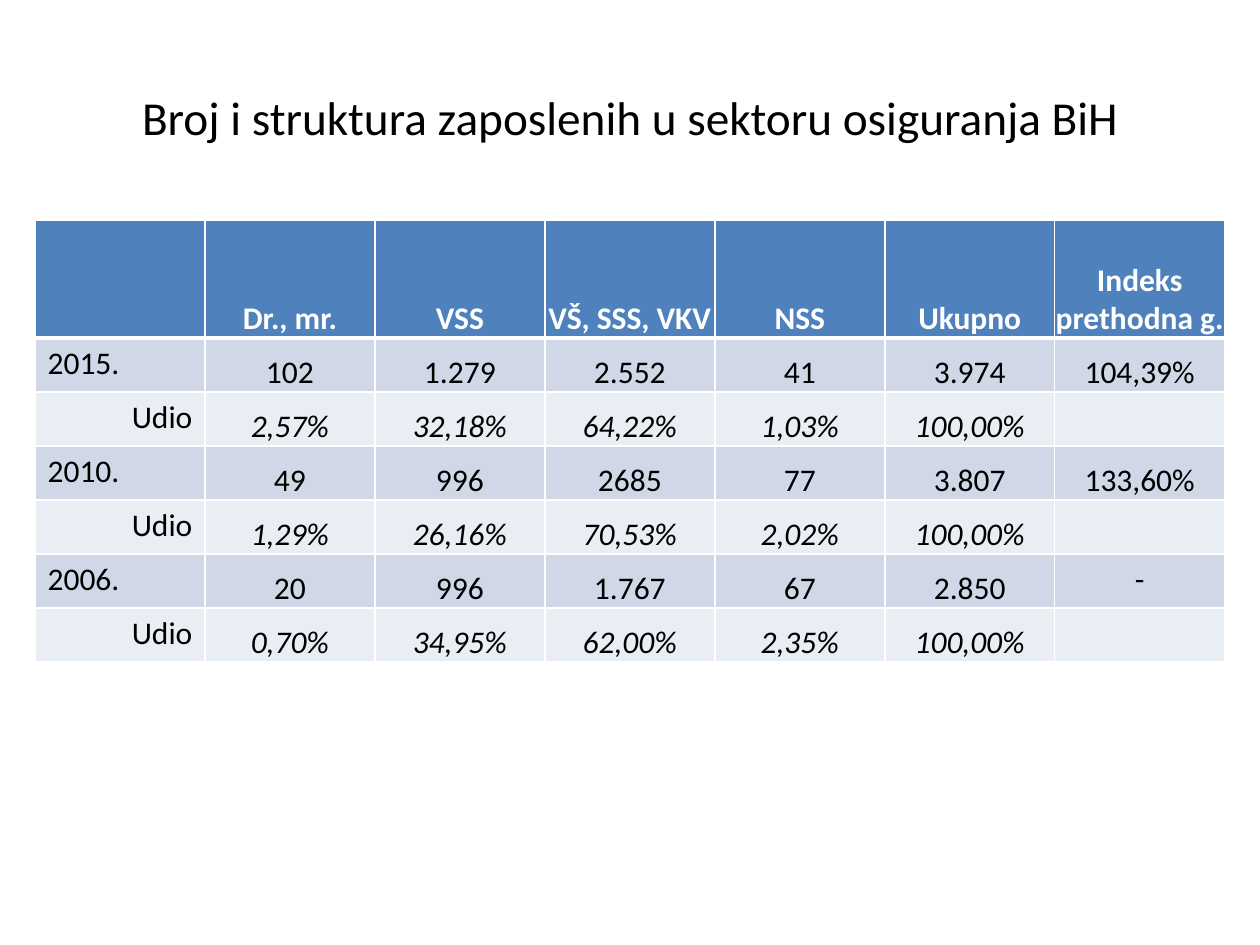
from lxml import etree
from pptx import Presentation
from pptx.dml.color import RGBColor
from pptx.enum.text import MSO_ANCHOR, PP_ALIGN
from pptx.oxml.ns import qn
from pptx.util import Emu, Pt

SCALE = 914400 / 126
FONT = "Calibri"
BLACK = RGBColor(0x00, 0x00, 0x00)
WHITE = RGBColor(0xFF, 0xFF, 0xFF)
HEADER_BLUE = RGBColor(0x4F, 0x81, 0xBD)
YEAR_BLUE = RGBColor(0xD0, 0xD8, 0xE8)
SHARE_BLUE = RGBColor(0xE9, 0xED, 0xF4)
LEFT, CENTER, RIGHT = PP_ALIGN.LEFT, PP_ALIGN.CENTER, PP_ALIGN.RIGHT
TOP, MIDDLE, BOTTOM = MSO_ANCHOR.TOP, MSO_ANCHOR.MIDDLE, MSO_ANCHOR.BOTTOM

TITLE = "Broj i struktura zaposlenih u sektoru osiguranja BiH"
ROWS = [
    ["", "Dr., mr.", "VSS", "VŠ, SSS, VKV", "NSS", "Ukupno", "Indeks prethodna g."],
    ["2015.", "102", "1.279", "2.552", "41", "3.974", "104,39%"],
    ["Udio", "2,57%", "32,18%", "64,22%", "1,03%", "100,00%", ""],
    ["2010.", "49", "996", "2685", "77", "3.807", "133,60%"],
    ["Udio", "1,29%", "26,16%", "70,53%", "2,02%", "100,00%", ""],
    ["2006.", "20", "996", "1.767", "67", "2.850", "-"],
    ["Udio", "0,70%", "34,95%", "62,00%", "2,35%", "100,00%", ""],
]


def px(n):
    """Turn pixels into EMU."""
    return Emu(round(n * SCALE))


def add_run(p, text, size, color, bold=False, italic=False):
    """Add one styled run to a paragraph."""
    r = p.add_run()
    r.text = text
    r.font.name = FONT
    r.font.size = Pt(size)
    r.font.color.rgb = color
    r.font.bold = bold
    r.font.italic = italic


def add_title(s):
    """Add the centred slide title."""
    sp = s.shapes.add_textbox(px(63), px(38), px(1134), px(158))
    tf = sp.text_frame
    tf.word_wrap = True
    tf.vertical_anchor = MIDDLE
    p = tf.paragraphs[0]
    p.alignment = CENTER
    add_run(p, TITLE, 27, BLACK)


def set_borders(cell, bottom):
    """Draw white borders around a cell, the bottom one in its own width."""
    tcPr = cell._tc.get_or_add_tcPr()
    for side, width in (("L", 1), ("R", 1), ("T", 1), ("B", bottom)):
        ln = etree.SubElement(tcPr, qn(f"a:ln{side}"), w=str(Pt(width)))
        fill = etree.SubElement(ln, qn("a:solidFill"))
        etree.SubElement(fill, qn("a:srgbClr"), val=str(WHITE))


def fill_cell(cell, text, row, col):
    """Style one cell by its place in the table and write its text."""
    header = row == 0
    share = not header and row % 2 == 0
    set_borders(cell, 3 if header else 1)
    cell.fill.solid()
    cell.fill.fore_color.rgb = HEADER_BLUE if header else SHARE_BLUE if share else YEAR_BLUE
    if not text:
        return
    p = cell.text_frame.paragraphs[0]
    if col == 0:
        p.alignment = RIGHT if share else LEFT
    else:
        p.alignment = CENTER
    if col == 0 or text == "-":
        cell.vertical_anchor = TOP
    else:
        cell.vertical_anchor = BOTTOM
        cell.margin_left = cell.margin_right = 0
        cell.margin_top = cell.margin_bottom = 0
    add_run(p, text, 18, WHITE if header else BLACK, header, share and col > 0)


def add_staff_table(s):
    """Add the table of employees by qualification."""
    n_rows, n_cols = len(ROWS), len(ROWS[0])
    frame = s.shapes.add_table(n_rows, n_cols, px(35), px(220), px(1190), px(442))
    table = frame.table
    for column in table.columns:
        column.width = px(170)
    for i, texts in enumerate(ROWS):
        table.rows[i].height = px(54 if i else 118)
        for j, text in enumerate(texts):
            fill_cell(table.cell(i, j), text, i, j)


def main():
    """Build the slide and save it."""
    prs = Presentation()
    prs.slide_width, prs.slide_height = px(1260), px(945)
    s = prs.slides.add_slide(prs.slide_layouts[6])
    add_title(s)
    add_staff_table(s)
    prs.save("out.pptx")


if __name__ == "__main__":
    main()
